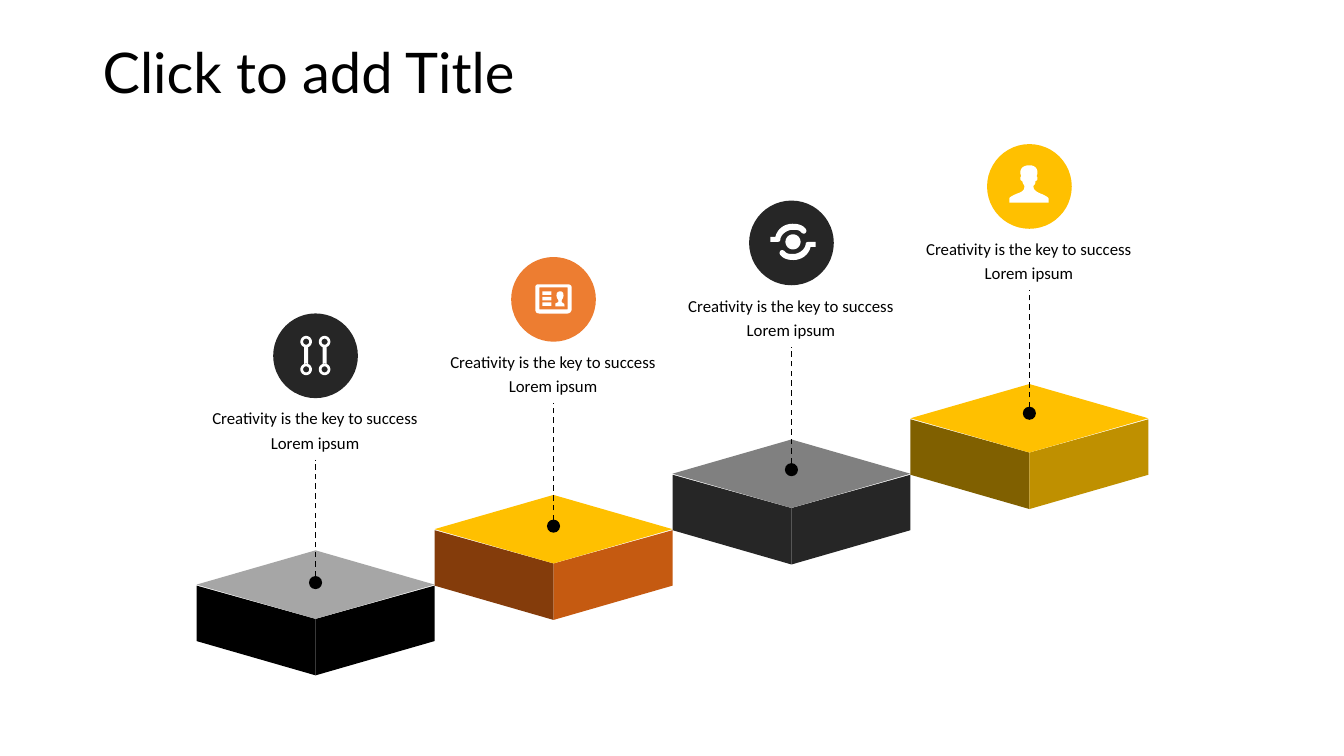
import math

import pptx
import pptx.dml.color
import pptx.enum.dml
import pptx.enum.shapes
import pptx.enum.text
import pptx.oxml.ns
import pptx.util
from lxml import etree

Inches = pptx.util.Inches
Pt = pptx.util.Pt
RGBColor = pptx.dml.color.RGBColor

BLACK = RGBColor(0x00, 0x00, 0x00)
WHITE = RGBColor(0xFF, 0xFF, 0xFF)
CHARCOAL = RGBColor(0x26, 0x26, 0x26)
GRAY = RGBColor(0x80, 0x80, 0x80)
SILVER = RGBColor(0xA6, 0xA6, 0xA6)
GOLD = RGBColor(0xFF, 0xC0, 0x00)
DARK_GOLD = RGBColor(0xBF, 0x90, 0x00)
OLIVE = RGBColor(0x80, 0x60, 0x00)
ORANGE = RGBColor(0xED, 0x7D, 0x31)
RUST = RGBColor(0xC5, 0x5A, 0x11)
BROWN = RGBColor(0x84, 0x3C, 0x0B)


# Icon outlines: hundredths of an inch from the disc centre
def rectangle(left, top, right, bottom):
    return [(left, top), (right, top), (right, bottom), (left, bottom)]


def circle(x, y, radius, count=32):
    angles = [2 * math.pi * i / count for i in range(count)]
    return [(x + radius * math.cos(a), y + radius * math.sin(a)) for a in angles]


def curve(start, *segments):
    """Pairs are straight ends; six numbers are a cubic Bezier segment."""
    points = [start]
    for segment in segments:
        if len(segment) == 2:
            points.append(segment)
            continue
        x0, y0 = points[-1]
        x1, y1, x2, y2, x3, y3 = segment
        for t in (i / 8 for i in range(1, 9)):
            a, b, c, d = (1 - t) ** 3, 3 * t * (1 - t) ** 2, 3 * t * t * (1 - t), t ** 3
            points.append((a * x0 + b * x1 + c * x2 + d * x3,
                           a * y0 + b * y1 + c * y2 + d * y3))
    return points


def branch_icon():
    outlines = []
    for x in (-9.3, 9):
        outlines.append(rectangle(x - 2, -8.6, x + 2, 8.2))
        for y in (-14, 13.5):
            outlines += [circle(x, y, 5.7), circle(x, y, 3)]
    return outlines


def card_icon():
    frame = curve((14, -15), (-14, -15), (-17, -15, -18, -14, -18, -12), (-18, 10),
                  (-18, 12, -17, 14, -14, 14), (14, 14), (16, 14, 18, 12, 18, 10),
                  (18, -12), (18, -14, 16, -15, 14, -15))
    text_lines = [rectangle(-11, y, -2, y + 3.5) for y in (-8, -2.5, 3)]
    portrait = curve((10, 4), (10, 4, 8, 3, 8, 2), (8, 0, 10, -1, 10, -4),
                     (10, -6, 9, -8, 7, -8), (4, -8, 3, -6, 3, -4),
                     (3, -1, 5, 0, 5, 2), (5, 3, 2, 4, 2, 4), (2, 7), (11, 7),
                     (11, 7, 11, 4, 10, 4))
    return [frame, rectangle(-14, -12, 14, 10), *text_lines, portrait]


def orbit_icon():
    arm = curve((-11, -4), (-10, -9, -4, -13, 1, -13), (5, -13, 8, -13, 10, -10),
                (11, -9, 14, -9, 14, -10), (15, -11, 15, -13, 14, -14),
                (11, -18, 6, -19, 1, -19), (-7, -19, -14, -14, -16, -6),
                (-21, -6), (-21, -1), (-14, -1), (-11, -1, -11, -3, -11, -4))
    turned_arm = [(3 - x, -2 - y) for x, y in arm]
    return [circle(1.5, -1, 7.5), arm, turned_arm]


def person_icon():
    return [curve((11, 7), (6, 5, 4, 3, 4, 0), (4, -2, 6, -1, 6, -5),
                  (6, -6, 8, -5, 8, -8), (8, -10, 7, -10, 7, -10),
                  (7, -10, 8, -12, 8, -14), (8, -16, 7, -21, 0, -21),
                  (-8, -21, -9, -16, -9, -14), (-9, -12, -8, -10, -8, -10),
                  (-8, -10, -9, -10, -9, -8), (-9, -5, -7, -6, -7, -5),
                  (-6, -1, -5, -2, -5, 0), (-5, 3, -6, 5, -12, 7),
                  (-17, 9, -20, 11, -20, 12), (-20, 16), (19, 16), (19, 12),
                  (19, 11, 16, 9, 11, 7))]


class StairSlide:
    title_font = "Lato"
    body_font = "Calibri"

    def __init__(self, presentation):
        self.shapes = presentation.slides.add_slide(presentation.slide_layouts[6]).shapes

    def paint(self, shape, color):
        shape.shadow.inherit = False
        shape.fill.solid()
        shape.fill.fore_color.rgb = color
        shape.line.fill.background()

    def outline(self, contours, color):
        contours = [[(Inches(x), Inches(y)) for x, y in points] for points in contours]
        builder = self.shapes.build_freeform(*contours[0][0])
        for index, points in enumerate(contours):
            if index:
                builder.move_to(*points[0])
            builder.add_line_segments(points[1:], close=True)
        self.paint(builder.convert_to_shape(), color)

    def disc(self, x, y, diameter, color):
        shape = self.shapes.add_shape(
            pptx.enum.shapes.MSO_SHAPE.OVAL, Inches(x - diameter / 2),
            Inches(y - diameter / 2), Inches(diameter), Inches(diameter))
        self.paint(shape, color)

    def text(self, left, top, width, height, words, font, size):
        box = self.shapes.add_textbox(Inches(left), Inches(top), Inches(width), Inches(height))
        box.text_frame.word_wrap = True
        paragraph = box.text_frame.paragraphs[0]
        run = paragraph.add_run()
        run.text = words
        run.font.name = font
        run.font.size = Pt(size)
        run.font.color.rgb = BLACK
        return paragraph

    def title(self, words):
        self.text(0.92, 0.4, 11.5, 0.84, words, self.title_font, 40).line_spacing = 0.9

    def block(self, x, top, left_color, right_color, top_color):
        for side, color in ((-1.18, left_color), (1.18, right_color)):
            self.outline([[(x, top + 1.24), (x + side, top + 0.9),
                           (x + side, top + 0.35), (x, top + 0.68)]], color)
        self.outline([[(x, top), (x + 1.18, top + 0.34),
                       (x, top + 0.68), (x - 1.18, top + 0.34)]], top_color)

    def label(self, x, y, color, icon, words):
        self.disc(x, y, 0.84, color)
        self.outline([[(x + u / 100, y + v / 100) for u, v in points] for points in icon], WHITE)
        paragraph = self.text(x - 1.2, y + 0.43, 2.39, 0.57, words, self.body_font, 12)
        paragraph.alignment = pptx.enum.text.PP_ALIGN.CENTER
        paragraph.line_spacing = 1.2
        paragraph.space_before = Pt(8.5)

    def pin(self, x, y):
        self.disc(x, y + 0.06, 0.13, BLACK)
        line = self.shapes.add_connector(
            pptx.enum.shapes.MSO_CONNECTOR.STRAIGHT,
            Inches(x), Inches(y), Inches(x), Inches(y - 1.16))
        line.line.color.rgb = BLACK
        line.line.width = Pt(1)
        line.line.dash_style = pptx.enum.dml.MSO_LINE.DASH
        etree.SubElement(line.element.spPr, pptx.oxml.ns.qn("a:effectLst"))


def main():
    presentation = pptx.Presentation()
    presentation.slide_width = Inches(13.33)
    presentation.slide_height = Inches(7.5)
    slide = StairSlide(presentation)

    # Block colours (left, right, top), disc colour and icon of each step
    steps = [
        ((BLACK, BLACK, SILVER), CHARCOAL, branch_icon()),
        ((BROWN, RUST, GOLD), ORANGE, card_icon()),
        ((CHARCOAL, CHARCOAL, GRAY), CHARCOAL, orbit_icon()),
        ((OLIVE, DARK_GOLD, GOLD), GOLD, person_icon()),
    ]
    centers = [3.13 + 2.36 * i for i in range(len(steps))]

    # Staircase
    for i, (x, (faces, _, _)) in enumerate(zip(centers, steps)):
        slide.block(x, 5.46 - 0.55 * i, *faces)
    # Discs with captions
    for i, (x, (_, color, icon)) in enumerate(zip(centers, steps)):
        slide.label(x, 3.53 - 0.56 * i, color, icon,
                    "Creativity is the key to success Lorem ipsum")
    # Dashed pins
    for i, x in enumerate(centers):
        slide.pin(x, 5.72 - 0.56 * i)

    slide.title("Click to add Title")
    presentation.save("out.pptx")


if __name__ == "__main__":
    main()
